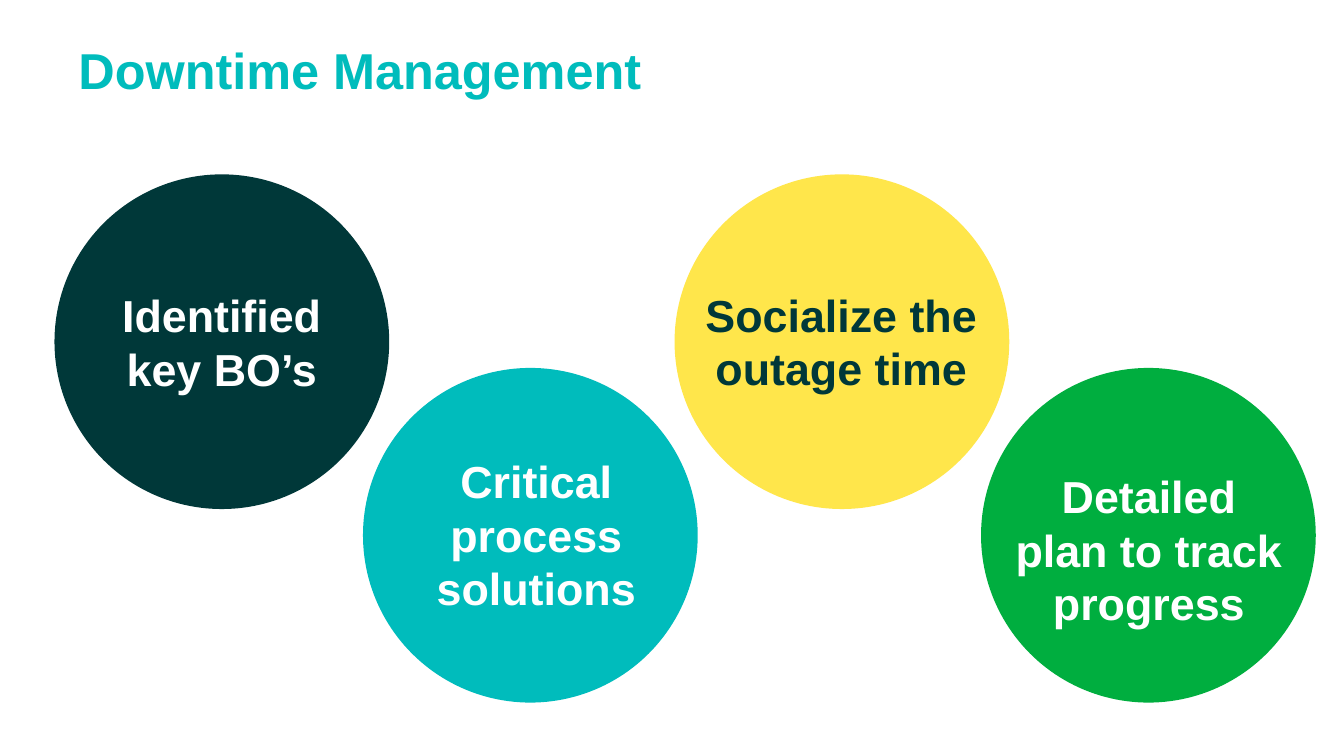
from pptx import Presentation
from pptx.dml.color import RGBColor
from pptx.enum.shapes import MSO_SHAPE
from pptx.enum.text import MSO_ANCHOR, MSO_AUTO_SIZE, PP_ALIGN
from pptx.util import Emu, Pt

DARK, TEAL, YELLOW, GREEN, WHITE = "003839", "00BCBC", "FFE64B", "00AE3F", "FFFFFF"
EMU_PER_PX = 9144
DIAMETER = 332
HIGH, LOW = 173, 365


def px(length):
    return Emu(length * EMU_PER_PX)


def color(value):
    return RGBColor.from_string(value)


class SlideBuilder:
    font = {"name": "Arial", "bold": True}

    def __init__(self, page):
        self.page = page

    def fill_text(self, frame, text, ink, size=32, align=PP_ALIGN.CENTER):
        frame.word_wrap = True
        para = frame.paragraphs[0]
        para.alignment = align
        span = para.add_run()
        span.text = text
        for name, value in {**self.font, "size": Pt(size)}.items():
            setattr(span.font, name, value)
        span.font.color.rgb = color(ink)

    def label(self, bounds, text, ink, size=32, align=PP_ALIGN.CENTER):
        box = self.page.shapes.add_textbox(*map(px, bounds))
        box.text_frame.auto_size = MSO_AUTO_SIZE.SHAPE_TO_FIT_TEXT
        self.fill_text(box.text_frame, text, ink, size, align)

    def circle(self, left, top, fill):
        circle = self.page.shapes.add_shape(
            MSO_SHAPE.OVAL, px(left), px(top), px(DIAMETER), px(DIAMETER)
        )
        circle.shadow.inherit = False
        circle.fill.solid()
        circle.fill.fore_color.rgb = color(fill)
        circle.line.fill.background()
        circle.text_frame.vertical_anchor = MSO_ANCHOR.MIDDLE
        return circle


def main():
    deck = Presentation()
    deck.slide_width, deck.slide_height = px(1333), px(750)
    builder = SlideBuilder(deck.slides.add_slide(deck.slide_layouts[6]))

    builder.label((68, 34, 1128, 71), "Downtime Management", TEAL, 36, PP_ALIGN.LEFT)

    first = builder.circle(54, HIGH, DARK)
    builder.fill_text(first.text_frame, "Identified key BO’s", WHITE)
    for left, top, fill in ((360, LOW, TEAL), (669, HIGH, YELLOW), (973, LOW, GREEN)):
        builder.circle(left, top, fill)

    for bounds, text, ink in (
        ((678, 280, 313, 118), "Socialize the outage time", DARK),
        ((992, 460, 295, 172), "Detailed plan to track progress", WHITE),
        ((413, 445, 238, 172), "Critical process solutions", WHITE),
    ):
        builder.label(bounds, text, ink)

    deck.save("out.pptx")


if __name__ == "__main__":
    main()
